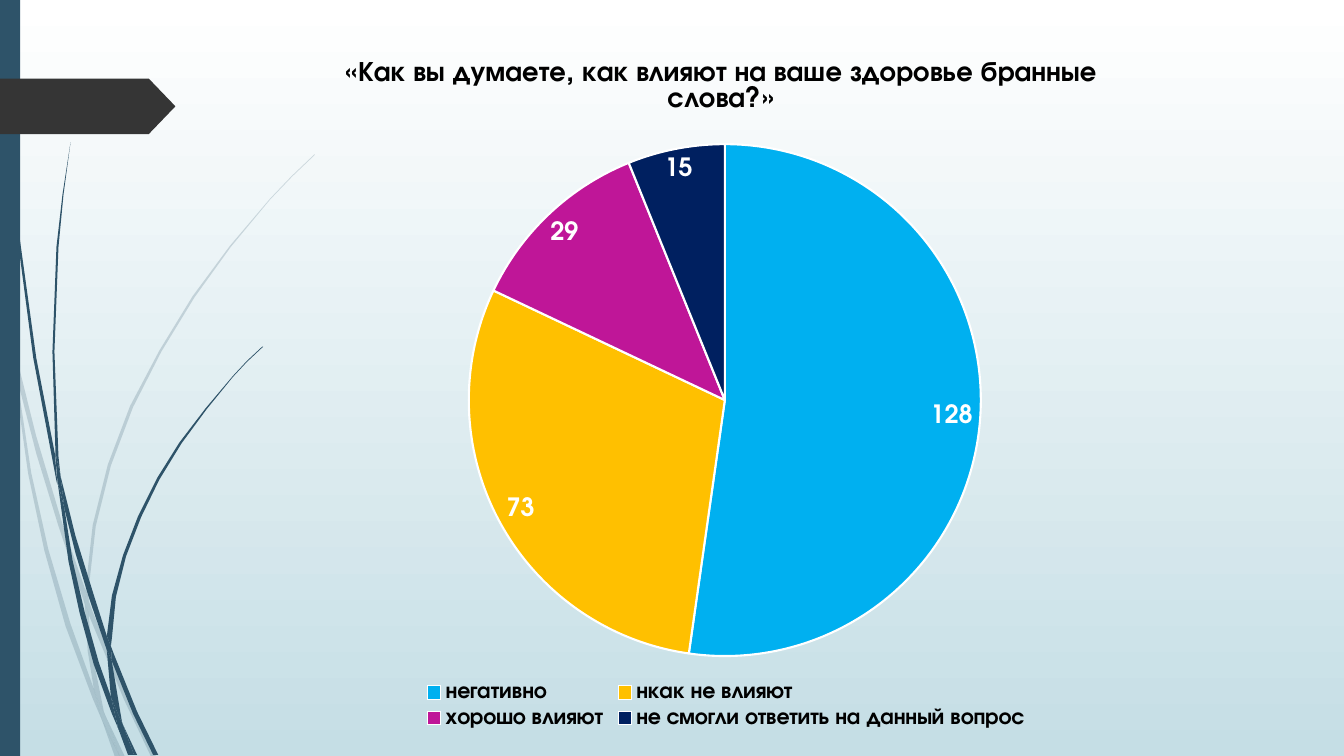
from dataclasses import dataclass

from lxml.etree import SubElement
from pptx import Presentation
from pptx.chart.data import CategoryChartData
from pptx.dml.color import RGBColor
from pptx.enum.chart import XL_CHART_TYPE, XL_LABEL_POSITION, XL_LEGEND_POSITION
from pptx.enum.shapes import MSO_SHAPE
from pptx.oxml import parse_xml
from pptx.oxml.ns import nsdecls, qn
from pptx.util import Inches, Pt


@dataclass(frozen=True)
class Theme:
    font: str = "TeX Gyre Adventor"
    title_size: int = 20
    label_size: int = 18
    legend_size: int = 16
    sky: str = "FFFFFF"
    ground: str = "C5DEE5"
    grass: str = "2E5369"
    tag: str = "353535"
    text: str = "000000"
    light: str = "FFFFFF"
    slices: tuple = ("00B0F0", "FFC000", "BF1698", "002060")


THEME = Theme()


def paint(shape, color):
    shape.shadow.inherit = False
    shape.fill.solid()
    shape.fill.fore_color.rgb = RGBColor.from_string(color)
    shape.line.fill.background()


def style_font(font, size, color):
    font.name = THEME.font
    font.size = Pt(size)
    font.bold = True
    font.color.rgb = RGBColor.from_string(color)


deck = Presentation()
deck.slide_width, deck.slide_height = Inches(13.33), Inches(7.5)
page = deck.slides.add_slide(deck.slide_layouts[6])

backdrop = page.background.fill
backdrop.gradient()
backdrop.gradient_angle = 270
for stop, color in zip(backdrop.gradient_stops, (THEME.sky, THEME.ground)):
    stop.color.rgb = RGBColor.from_string(color)

# Outlines of the grass pieces, in inches
pale_grass = [
    [(0.11, 3.5), (0.09, 3.22), (0, 2.82), (0, 2.99), (0.1, 3.44)],
    [(0.58, 5.22), (0.84, 5.99), (0.85, 5.86), (0.62, 5.2), (0.36, 4.33), (0.14, 3.45),
     (0.17, 3.76), (0.36, 4.5)],
    [(0.92, 6.07), (0.88, 5.96), (0.88, 6.1), (1.23, 6.94), (1.5, 7.51), (1.55, 7.51),
     (1.27, 6.92)],
    [(1.19, 7.51), (1.24, 7.51), (1.05, 7.11)],
    [(0.93, 6.83), (0.7, 6.19), (0.48, 5.45), (0.31, 4.69), (0.17, 3.76), (0.11, 3.5),
     (0.28, 4.7), (0.44, 5.46), (0.65, 6.21), (0.92, 6.93), (1.01, 7.14), (0.99, 7.07)],
    [(0.84, 5.99), (0.87, 6.46), (0.93, 6.83), (0.96, 6.92), (1.05, 7.11), (1.03, 7.06),
     (0.91, 6.46), (0.88, 6.1), (0.88, 6.08)],
    [(0.88, 5.84), (0.95, 5.22), (1.1, 4.62), (1.32, 4.04), (1.6, 3.49), (1.93, 2.95),
     (2.29, 2.45), (2.68, 1.98), (2.9, 1.75), (3.12, 1.54), (3.12, 1.53), (2.89, 1.75),
     (2.68, 1.97), (2.28, 2.44), (1.91, 2.94), (1.58, 3.48), (1.29, 4.03), (1.07, 4.61),
     (0.92, 5.21), (0.85, 5.84), (0.85, 5.86), (0.88, 5.96)],
    [(1.01, 7.14), (1.14, 7.51), (1.19, 7.51)],
    [(0.88, 6.08), (0.88, 6.1), (0.88, 5.96), (0.85, 5.86), (0.84, 5.99)],
    [(0.96, 6.92), (0.93, 6.83), (0.99, 7.07), (1.01, 7.14), (1.19, 7.51), (1.05, 7.11)],
]
dark_grass = [
    [(0.07, 1.1), (0.17, 2.33), (0.33, 3.55), (0.56, 4.77), (0.57, 4.81), (0.55, 4.57),
     (0.55, 4.53), (0.36, 3.55), (0.19, 2.32), (0.08, 1.09), (0.05, 0.48), (0.04, 0),
     (0.03, 0), (0.04, 0.48)],
    [(0.88, 5.92), (1.06, 6.45), (1.06, 6.33), (1.06, 6.31), (0.93, 5.9), (0.75, 5.32),
     (0.6, 4.72), (0.64, 5.05), (0.75, 5.49)],
    [(1.13, 6.49), (1.1, 6.41), (1.11, 6.56), (1.32, 7.08), (1.52, 7.49), (1.57, 7.49),
     (1.36, 7.06)],
    [(1.1, 6.91), (0.98, 6.57), (0.84, 6.07), (0.72, 5.56), (0.64, 5.05), (0.57, 4.77),
     (0.68, 5.57), (0.79, 6.08), (0.93, 6.59), (1.11, 7.08), (1.17, 7.22), (1.16, 7.17)],
    [(0.6, 4.72), (0.58, 4.53), (0.54, 3.49), (0.58, 2.45), (0.63, 1.93), (0.7, 1.41),
     (0.62, 1.93), (0.56, 2.45), (0.52, 3.49), (0.55, 4.49)],
    [(1.33, 7.49), (1.36, 7.49), (1.22, 7.19)],
    [(0.57, 4.77), (0.64, 5.05), (0.6, 4.72), (0.55, 4.49), (0.55, 4.53)],
    [(1.11, 6.33), (1.15, 5.92), (1.25, 5.52), (1.4, 5.13), (1.58, 4.76), (1.8, 4.4),
     (2.05, 4.06), (2.31, 3.74), (2.45, 3.59), (2.61, 3.44), (2.6, 3.44), (2.45, 3.58),
     (2.31, 3.73), (2.04, 4.05), (1.78, 4.39), (1.56, 4.74), (1.37, 5.12), (1.22, 5.51),
     (1.11, 5.91), (1.06, 6.31), (1.1, 6.41)],
    [(1.17, 7.22), (1.27, 7.49), (1.31, 7.49)],
    [(1.06, 6.45), (1.1, 6.91), (1.16, 7.06), (1.22, 7.19), (1.21, 7.16), (1.11, 6.56),
     (1.09, 6.51)],
    [(1.06, 6.45), (1.09, 6.51), (1.11, 6.56), (1.1, 6.41), (1.06, 6.31), (1.06, 6.33)],
    [(1.16, 7.06), (1.1, 6.91), (1.16, 7.17), (1.17, 7.22), (1.3, 7.49), (1.33, 7.49),
     (1.22, 7.19)],
]
for pieces, opacity in ((pale_grass, 20), (dark_grass, 100)):
    tuft = page.shapes.add_group_shape()
    for outline in pieces:
        corners = [(Inches(x), Inches(y)) for x, y in outline]
        builder = tuft.shapes.build_freeform(*corners[0])
        builder.add_line_segments(corners[1:], close=True)
        blade = builder.convert_to_shape()
        paint(blade, THEME.grass)
        if opacity < 100:
            color_node = blade.fill._xPr.find(qn("a:solidFill"))[0]
            SubElement(color_node, qn("a:alpha")).set("val", str(opacity * 1000))

side_bar = page.shapes.add_shape(MSO_SHAPE.RECTANGLE, 0, 0, Inches(0.2), Inches(7.5))
paint(side_bar, THEME.grass)
tag = page.shapes.add_shape(MSO_SHAPE.PENTAGON, 0, Inches(0.78), Inches(1.74), Inches(0.55))
tag.adjustments[0] = 0.48
paint(tag, THEME.tag)

answers = CategoryChartData()
answers.categories = ["негативно", "нкак не влияют", "хорошо влияют",
                      "не смогли ответить на данный вопрос"]
answers.add_series("Series 1", (128, 73, 29, 15))
chart = page.shapes.add_chart(XL_CHART_TYPE.PIE, Inches(1.81), Inches(0.48),
                              Inches(10.78), Inches(6.79), answers).chart
chart.font.name = THEME.font
chart.font.size = Pt(10)

chart.has_title = True
title = chart.chart_title
title.include_in_layout = False
title.text_frame.text = "«Как вы думаете, как влияют на ваше здоровье бранные слова?»"
style_font(title.text_frame.paragraphs[0].runs[0].font, THEME.title_size, THEME.text)

chart.has_legend = True
chart.legend.position = XL_LEGEND_POSITION.BOTTOM
chart.legend.include_in_layout = False
style_font(chart.legend.font, THEME.legend_size, THEME.text)

plot = chart.plots[0]
plot.vary_by_categories = True
for index, color in enumerate(THEME.slices):
    slice_format = plot.series[0].points[index].format
    slice_format.fill.solid()
    slice_format.fill.fore_color.rgb = RGBColor.from_string(color)
    slice_format.line.color.rgb = RGBColor.from_string(THEME.light)
    slice_format.line.width = Pt(1.5)

labels = plot.series[0].data_labels
labels.show_value = True
labels.position = XL_LABEL_POSITION.BEST_FIT
style_font(labels.font, THEME.label_size, THEME.light)

# Fixed places for pie and title, as percentages of the chart frame
chart_xml = chart._chartSpace.chart
for part, target, percentages in (
        (chart_xml.plotArea, '<c:layoutTarget val="inner"/>',
         {"x": 26, "y": 14, "w": 47.8, "h": 74.8}),
        (chart_xml.find(qn("c:title")), "", {"x": 14.5, "y": 0.5})):
    for old_layout in part.findall(qn("c:layout")):
        part.remove(old_layout)
    places = "".join(f'<c:{name} val="{value / 100}"/>' for name, value in percentages.items())
    layout = parse_xml(
        f'<c:layout {nsdecls("c")}><c:manualLayout>{target}<c:xMode val="edge"/>'
        f'<c:yMode val="edge"/>{places}</c:manualLayout></c:layout>')
    part.insert(0 if target else 1, layout)

deck.save("out.pptx")
